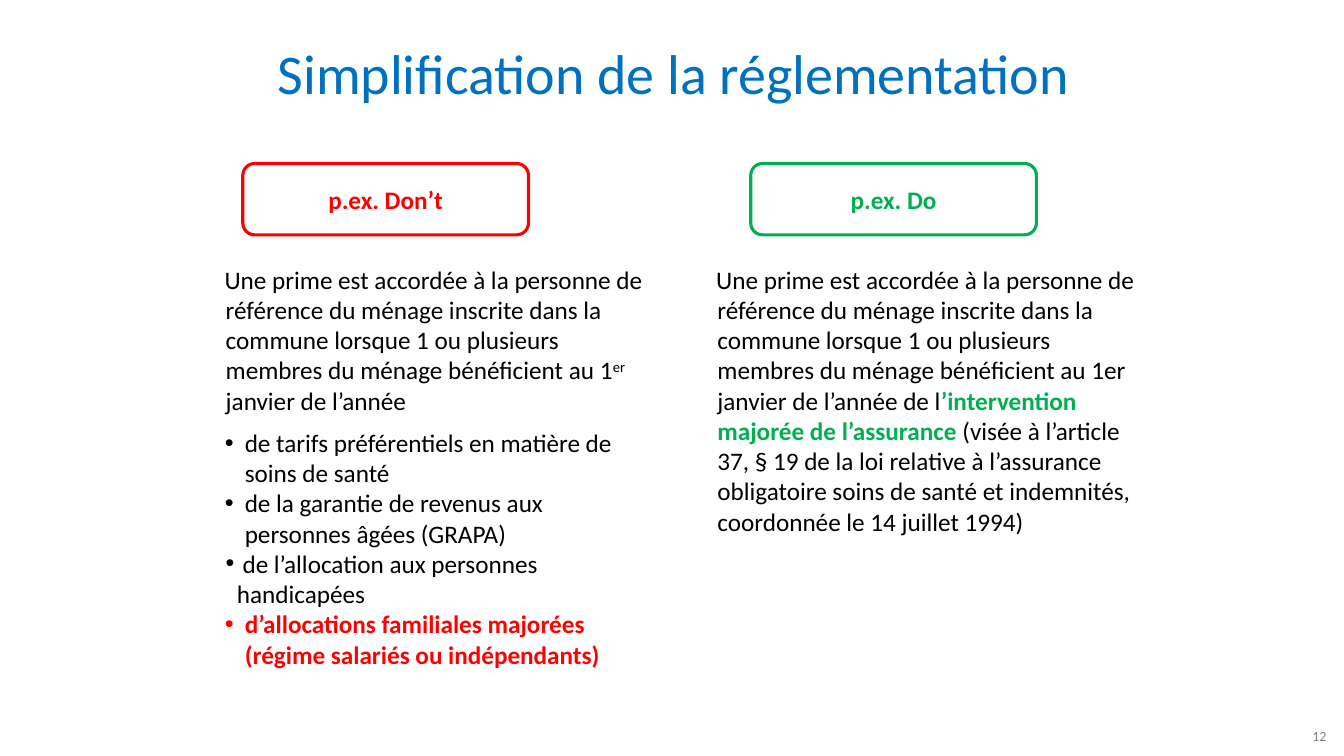
from lxml import etree
from pptx import Presentation
from pptx import util as u
from pptx.dml.color import RGBColor
from pptx.enum import shapes, text
from pptx.oxml.ns import qn

BLACK, RED, GREEN, BLUE, GREY = "000000", "FF0000", "00B050", "0070C0", "808080"


def rgb(value):
    return RGBColor.from_string(value)


def add_run(p, words, color=BLACK, bold=False, size=18):
    r = p.add_run()
    r.text = words
    r.font.name = "Calibri"
    r.font.size = u.Pt(size)
    r.font.bold = bold
    r.font.color.rgb = rgb(color)
    return r


prs = Presentation()
prs.slide_width, prs.slide_height = u.Cm(33.87), u.Cm(19.05)
s = prs.slides.add_slide(prs.slide_layouts[6])

# Title and slide number
for words, left, top, width, height, align, color, size in [
    ("Simplification de la réglementation", 1.73, 0.53, 30.48, 2.57,
     text.PP_ALIGN.CENTER, BLUE, 40),
    ("12", 30.91, 18.03, 2.77, 1.02, text.PP_ALIGN.RIGHT, GREY, 10),
]:
    sp = s.shapes.add_textbox(u.Cm(left), u.Cm(top), u.Cm(width), u.Cm(height))
    tf = sp.text_frame
    tf.word_wrap = True
    tf.vertical_anchor = text.MSO_ANCHOR.MIDDLE
    p = tf.paragraphs[0]
    p.alignment = align
    add_run(p, words, color, size=size)

# Column texts: paragraphs of (left margin, first-line indent, bulleted, runs)
intro = ("Une prime est accordée à la personne de référence du ménage inscrite "
         "dans la commune lorsque 1 ou plusieurs membres du ménage bénéficient au 1")
dont = [
    (0.51, -0.03, False, [(intro,), ("er",), (" janvier de l’année",)]),
    (0.99, -0.5, True, [("de tarifs préférentiels en matière de soins de santé",)]),
    (0.99, -0.5, True, [("de la garantie de revenus aux personnes âgées (GRAPA)",)]),
    (0.79, -0.28, True, [(" de l’allocation aux personnes handicapées",)]),
    (0.99, -0.5, True, [("d’allocations familiales majorées "
                         "(régime salariés ou indépendants)", RED, True)]),
]
do = [
    (0.51, -0.03, False, [
        (intro + "er janvier de l’année de l",),
        ("’intervention majorée de l’assurance", GREEN, True),
        (" (visée à l’article 37, § 19 de la loi relative à l’assurance obligatoire "
         "soins de santé et indemnités, coordonnée le 14 juillet 1994)",),
    ]),
]

for left, width, paragraphs in [(4.93, 11.61, dont), (17.32, 11.81, do)]:
    sp = s.shapes.add_textbox(u.Cm(left), u.Cm(6.53), u.Cm(width), u.Cm(9.8))
    tf = sp.text_frame
    tf.word_wrap = True
    for i, (margin, indent, bulleted, runs) in enumerate(paragraphs):
        p = tf.add_paragraph() if i else tf.paragraphs[0]
        pPr = p._p.get_or_add_pPr()
        pPr.set("marL", str(u.Cm(margin)))
        pPr.set("indent", str(u.Cm(indent)))
        if bulleted:
            etree.SubElement(pPr, qn("a:buFont")).set("typeface", "Arial")
            etree.SubElement(pPr, qn("a:buChar")).set("char", "•")
        if i == 1:
            p.space_before = u.Pt(8.5)  # gap between intro and list
        for run in runs:
            r = add_run(p, *run)
            if run[0] == "er":
                r._r.get_or_add_rPr().set("baseline", "30000")

# Column headings
for words, left, color in [("p.ex. Don’t", 6.12, RED), ("p.ex. Do", 18.92, GREEN)]:
    sp = s.shapes.add_shape(shapes.MSO_SHAPE.ROUNDED_RECTANGLE,
                            u.Cm(left), u.Cm(4.12), u.Cm(7.2), u.Cm(1.8))
    sp.shadow.inherit = False
    sp.fill.solid()
    sp.fill.fore_color.rgb = rgb("FFFFFF")
    sp.line.color.rgb = rgb(color)
    sp.line.width = u.Pt(2.25)
    tf = sp.text_frame
    tf.vertical_anchor = text.MSO_ANCHOR.MIDDLE
    p = tf.paragraphs[0]
    p.alignment = text.PP_ALIGN.CENTER
    add_run(p, words, color, True)

prs.save("out.pptx")
